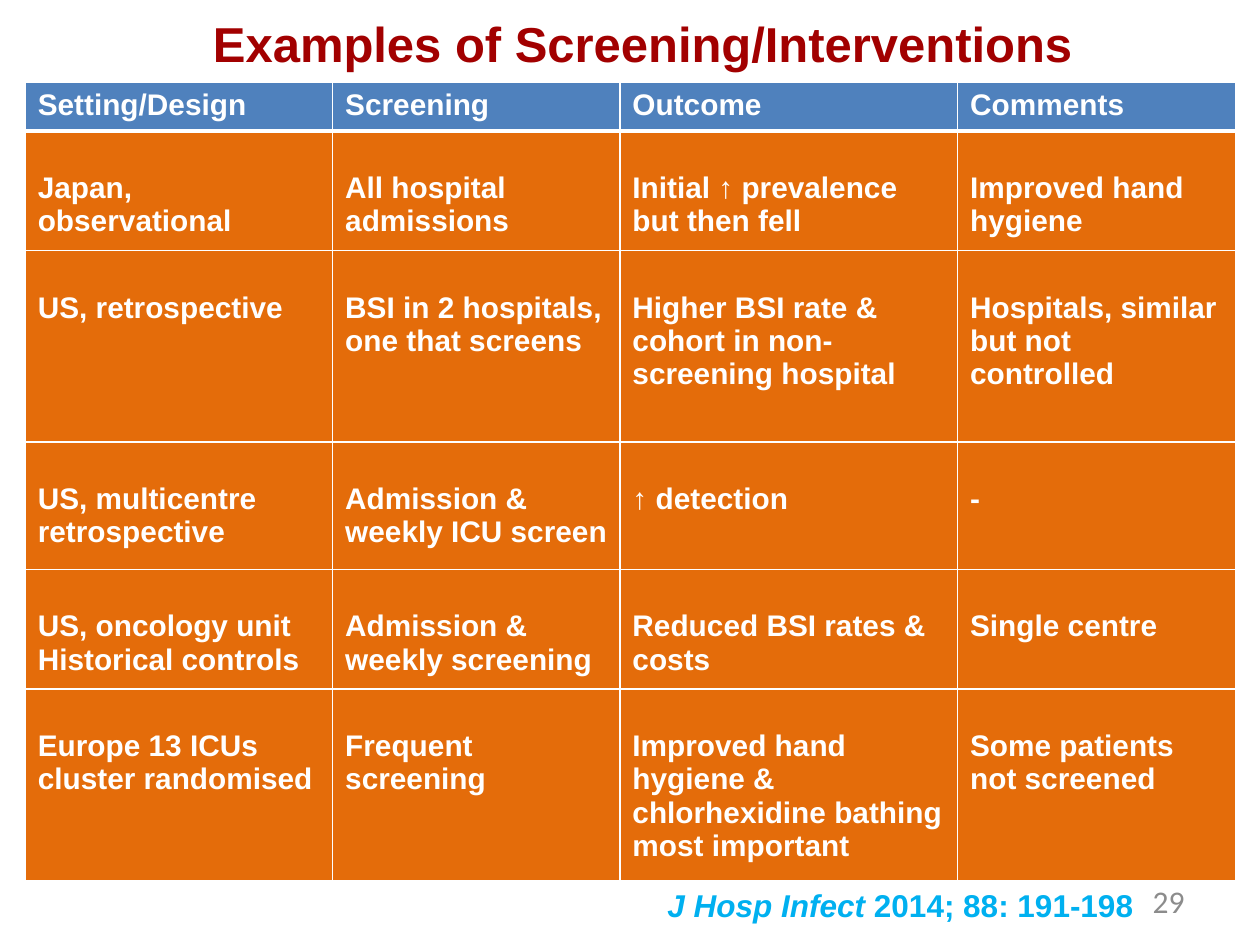
from dataclasses import dataclass

import pptx
import pptx.dml.color
import pptx.enum.text
import pptx.oxml
import pptx.oxml.ns
import pptx.util

Inches = pptx.util.Inches
Pt = pptx.util.Pt
RGBColor = pptx.dml.color.RGBColor
PP_ALIGN = pptx.enum.text.PP_ALIGN
MSO_ANCHOR = pptx.enum.text.MSO_ANCHOR

WHITE = RGBColor(0xFF, 0xFF, 0xFF)
DARK_RED = RGBColor(0xA2, 0x00, 0x00)
BLUE = RGBColor(0x4F, 0x81, 0xBD)
ORANGE = RGBColor(0xE4, 0x6C, 0x0A)
CYAN = RGBColor(0x00, 0xB0, 0xF0)
GREY = RGBColor(0x8C, 0x8C, 0x8C)

CELL_MARGIN = 0.05
LINE_HEIGHT = 0.27
COLUMN_WIDTHS = (2.44, 2.28, 2.68, 2.21)
HEADINGS = ("Setting/Design", "Screening", "Outcome", "Comments")


@dataclass
class Study:
    height: float
    setting: str
    screening: str
    outcome: str
    comments: str

    def texts(self) -> tuple[str, ...]:
        return self.setting, self.screening, self.outcome, self.comments


STUDIES = (
    Study(0.95, "Japan, observational", "All hospital admissions",
          "Initial ↑ prevalence but then fell", "Improved hand hygiene"),
    Study(1.52, "US, retrospective", "BSI in 2 hospitals, one that screens",
          "Higher BSI rate & cohort in non-screening hospital",
          "Hospitals, similar but not controlled"),
    Study(1.01, "US, multicentre retrospective", "Admission & weekly ICU screen",
          "↑ detection", "-"),
    Study(0.95, "US, oncology unit\nHistorical controls",
          "Admission & weekly screening", "Reduced BSI rates & costs",
          "Single centre"),
    Study(1.52, "Europe 13 ICUs cluster randomised", "Frequent screening",
          "Improved hand hygiene & chlorhexidine bathing most important",
          "Some patients not screened"),
)


def format_font(font, size: float, color: RGBColor, name: str = "Arial",
                bold: bool = True) -> None:
    font.name = name
    font.size = Pt(size)
    font.bold = bold
    font.color.rgb = color


def set_borders(cell, widths: dict[str, float]) -> None:
    """Draw white cell borders; keys in schema order: L, R, T, B."""
    tc_pr = cell._tc.get_or_add_tcPr()
    for i, (side, width) in enumerate(widths.items()):
        tc_pr.insert(i, pptx.oxml.parse_xml(
            f'<a:ln{side} {pptx.oxml.ns.nsdecls("a")} w="{Pt(width)}">'
            f'<a:solidFill><a:srgbClr val="{WHITE}"/></a:solidFill></a:ln{side}>'))


def fill_row(table, row: int, height: float, texts: tuple[str, ...],
             color: RGBColor, top: float, above: float, below: float) -> None:
    table.rows[row].height = Inches(height)
    for cell, text in zip(table.rows[row].cells, texts):
        cell.text = text
        cell.margin_left = cell.margin_right = Inches(0.1)
        cell.margin_top = Inches(top)
        cell.margin_bottom = Inches(CELL_MARGIN)
        cell.fill.solid()
        cell.fill.fore_color.rgb = color
        set_borders(cell, {"L": 1, "R": 1, "T": above, "B": below})
        for p in cell.text_frame.paragraphs:
            format_font(p.font, 17, WHITE)


def add_title(slide) -> None:
    title = slide.shapes.title
    title.left, title.top = Inches(0), Inches(-0.11)
    title.width, title.height = Inches(10.2), Inches(0.9)
    tf = title.text_frame
    tf.text = "Examples of Screening/Interventions"
    tf.vertical_anchor = MSO_ANCHOR.MIDDLE
    p = tf.paragraphs[0]
    p.alignment = PP_ALIGN.CENTER
    format_font(p.font, 28, DARK_RED)


def add_studies_table(slide) -> None:
    table = slide.shapes.add_table(
        len(STUDIES) + 1, len(HEADINGS), Inches(0.2), Inches(0.65),
        Inches(sum(COLUMN_WIDTHS)), Inches(6.33)).table
    for column, width in zip(table.columns, COLUMN_WIDTHS):
        column.width = Inches(width)
    fill_row(table, 0, 0.39, HEADINGS, BLUE, CELL_MARGIN, 1, 3)
    for row, study in enumerate(STUDIES, start=1):
        fill_row(table, row, study.height, study.texts(), ORANGE,
                 CELL_MARGIN + LINE_HEIGHT, 3 if row == 1 else 1, 1)


def add_text_box(slide, left: float, top: float, width: float,
                 align: PP_ALIGN, anchor: MSO_ANCHOR):
    """Add a one-line text box and return its paragraph."""
    tf = slide.shapes.add_textbox(
        Inches(left), Inches(top), Inches(width), Inches(0.4)).text_frame
    tf.word_wrap = True
    tf.vertical_anchor = anchor
    p = tf.paragraphs[0]
    p.alignment = align
    return p


def main() -> None:
    prs = pptx.Presentation()
    prs.slide_width, prs.slide_height = Inches(10), Inches(7.5)
    slide = prs.slides.add_slide(prs.slide_layouts.get_by_name("Title Only"))
    add_title(slide)
    add_studies_table(slide)

    p = add_text_box(slide, 4.39, 6.98, 5.51, PP_ALIGN.CENTER, MSO_ANCHOR.TOP)
    format_font(p.font, 18, CYAN)
    for text, italic in (("J Hosp Infect ", True), ("2014; 88: 191-198", False)):
        r = p.add_run()
        r.text = text
        r.font.italic = italic

    p = add_text_box(slide, 7.17, 6.95, 2.33, PP_ALIGN.RIGHT, MSO_ANCHOR.MIDDLE)
    p.text = "29"
    format_font(p.font, 18, GREY, "Calibri", False)

    prs.save("out.pptx")


if __name__ == "__main__":
    main()
